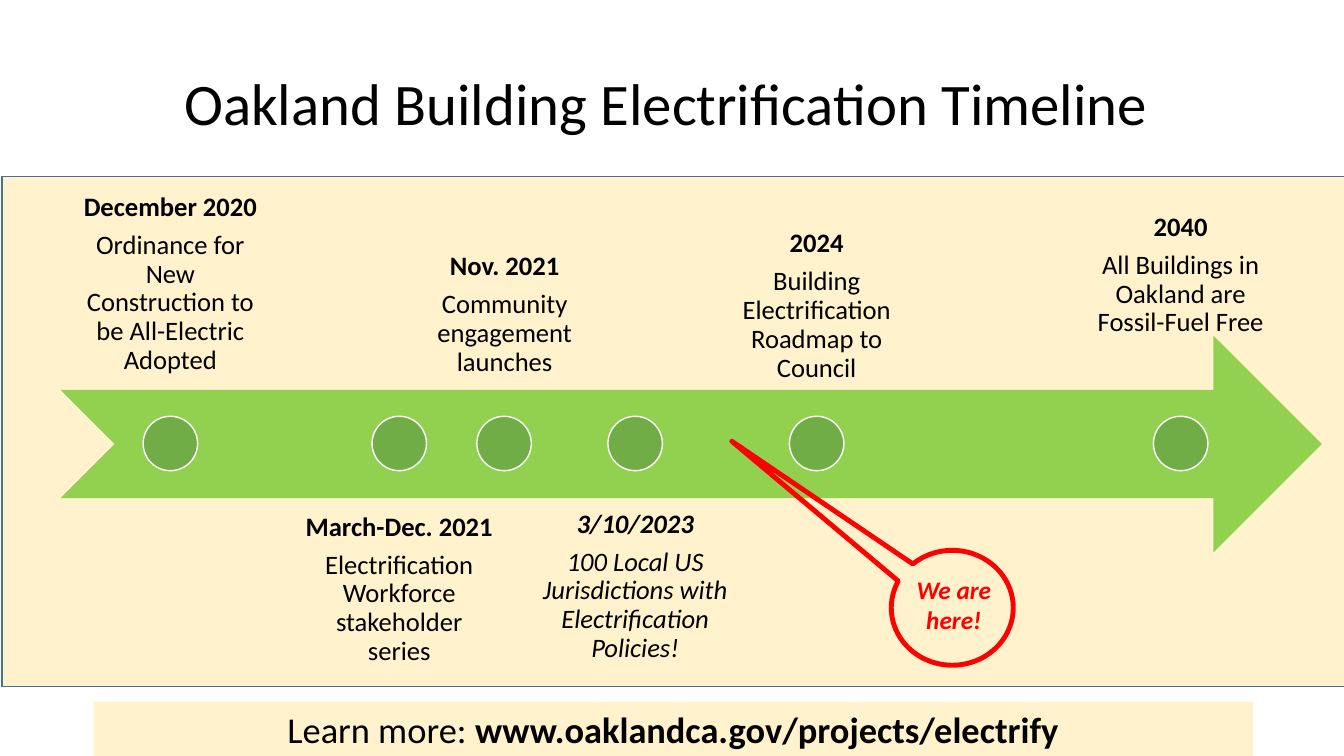
from dataclasses import dataclass

from pptx import Presentation
from pptx.dml.color import RGBColor
from pptx.enum.shapes import MSO_SHAPE
from pptx.enum.text import MSO_ANCHOR, PP_ALIGN
from pptx.util import Pt

EMU_PER_PX = 9144  # 100 px to the inch


def px(length):
    return length * EMU_PER_PX


def colour(code):
    return RGBColor.from_string(code)


@dataclass
class TimelinePage:
    """The current slide together with the style its elements share."""
    page: object
    font: str = "Calibri"
    ink: str = "000000"
    cream: str = "FFF2CC"
    dot_green: str = "70AD47"
    arrow_green: str = "92D050"
    alert: str = "FF0000"
    axis: int = 440
    dot_size: int = 54

    def style(self, para, size, code=None, bold=False, italic=False):
        para.alignment = PP_ALIGN.CENTER
        para.font.name = self.font
        para.font.size = Pt(size)
        para.font.bold = bold
        para.font.italic = italic
        para.font.color.rgb = colour(code or self.ink)

    def title(self, text, *box):
        holder = self.page.shapes.title
        holder.left, holder.top, holder.width, holder.height = map(px, box)
        frame = holder.text_frame
        frame.text = text
        frame.vertical_anchor = MSO_ANCHOR.MIDDLE
        para = frame.paragraphs[0]
        para.line_spacing = 0.9
        self.style(para, 42)

    def shape(self, kind, *box, fill=None, line=None, line_width=1):
        shape = self.page.shapes.add_shape(kind, *map(px, box))
        shape.shadow.inherit = False
        if fill:
            shape.fill.solid()
            shape.fill.fore_color.rgb = colour(fill)
        else:
            shape.fill.background()
        if line:
            shape.line.color.rgb = colour(line)
            shape.line.width = Pt(line_width)
        else:
            shape.line.fill.background()
        return shape

    def text_frame(self, *box):
        frame = self.page.shapes.add_textbox(*map(px, box)).text_frame
        frame.word_wrap = True
        return frame

    def milestone(self, date, event, centre, top, width, height,
                  anchor=MSO_ANCHOR.TOP, italic=False):
        """Add a dot on the arrow and a label centred on it."""
        frame = self.text_frame(centre - width // 2, top, width, height)
        frame.vertical_anchor = anchor
        frame.margin_left = frame.margin_right = px(15)
        frame.margin_top = frame.margin_bottom = px(15)
        heading, detail = frame.paragraphs[0], frame.add_paragraph()
        heading.text, detail.text = date, event
        detail.space_before = Pt(6.7)
        for para in (heading, detail):
            para.line_spacing = 0.9
            self.style(para, 19, bold=para is heading, italic=italic)
        radius = self.dot_size // 2
        self.shape(MSO_SHAPE.OVAL, centre - radius, self.axis - radius,
                   self.dot_size, self.dot_size,
                   fill=self.dot_green, line="FFFFFF")

    def here_callout(self, text):
        bubble = self.shape(MSO_SHAPE.OVAL_CALLOUT, 884, 546, 121, 114,
                            line=self.alert, line_width=3.5)
        bubble.adjustments[0] = -1.808
        bubble.adjustments[1] = -1.449
        para = self.text_frame(897, 565, 98, 71).paragraphs[0]
        para.text = text
        self.style(para, 18, self.alert, bold=True, italic=True)

    def link_bar(self, label, address, *box):
        bar = self.shape(MSO_SHAPE.RECTANGLE, *box, fill=self.cream)
        para = bar.text_frame.paragraphs[0]
        self.style(para, 26)
        for text, bold in ((label, False), (address, True)):
            span = para.add_run()
            span.text = text
            span.font.bold = bold


def main():
    deck = Presentation()
    deck.slide_width, deck.slide_height = px(1333), px(750)
    timeline = TimelinePage(deck.slides.add_slide(deck.slide_layouts[5]))

    timeline.shape(MSO_SHAPE.RECTANGLE, 2, 175, 1333, 506,
                   fill=timeline.cream, line="42719B")
    timeline.title("Oakland Building Electrification Timeline ",
                   92, 40, 1150, 132)
    timeline.shape(MSO_SHAPE.NOTCHED_RIGHT_ARROW, 60, 333, 1251, 215,
                   fill=timeline.arrow_green)

    bottom = MSO_ANCHOR.BOTTOM
    timeline.milestone(
        "December 2020",
        "Ordinance for New Construction to be All-Electric Adopted",
        169, 172, 216, 215, bottom)
    timeline.milestone(
        "March-Dec. 2021", "Electrification Workforce stakeholder series",
        396, 494, 216, 215)
    timeline.milestone(
        "Nov. 2021", "Community engagement launches",
        500, 174, 199, 215, bottom)
    timeline.milestone(
        "3/10/2023",
        "100 Local US Jurisdictions with Electrification Policies!",
        630, 491, 216, 215, italic=True)
    timeline.milestone(
        "2024", "Building Electrification Roadmap to Council",
        810, 213, 216, 174)
    timeline.milestone(
        "2040", "All Buildings in Oakland are Fossil-Fuel Free",
        1171, 188, 210, 162, bottom)

    timeline.here_callout("We are here!")
    timeline.link_bar("Learn more: ", "www.oaklandca.gov/projects/electrify",
                      93, 696, 1150, 54)
    deck.save("out.pptx")


if __name__ == "__main__":
    main()
